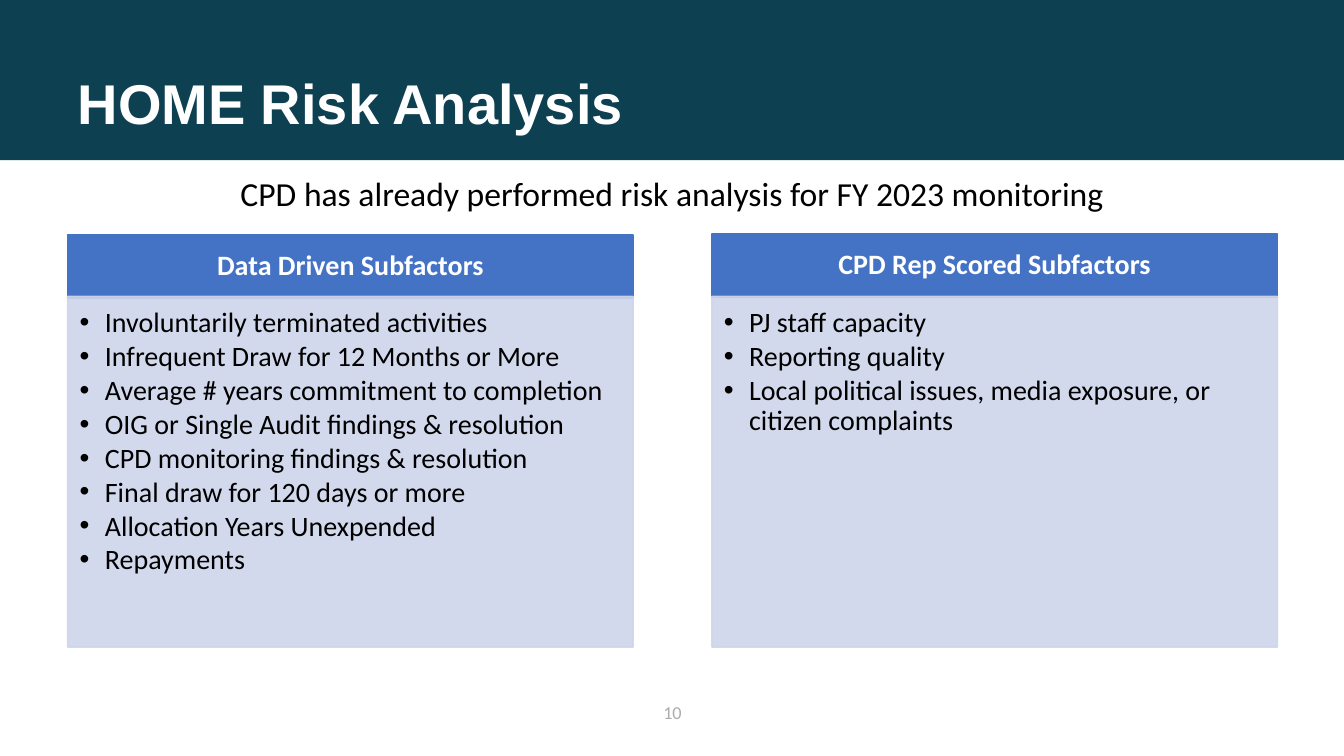
import dataclasses

import lxml.etree
import pptx
import pptx.dml.color
import pptx.enum.shapes
import pptx.enum.text
import pptx.oxml.ns
import pptx.util

PX = 9144  # EMU per px, 100 px to the inch
ALIGN = pptx.enum.text.PP_ALIGN
ANCHOR = pptx.enum.text.MSO_ANCHOR


@dataclasses.dataclass(frozen=True)
class Theme:
    band: str = "0D4051"
    header: str = "4472C4"
    panel: str = "CFD5EA"
    light: str = "FFFFFF"
    dark: str = "000000"
    muted: str = "AFABAB"
    heading_font: str = "Arial"
    body_font: str = "Calibri"
    title_size: int = 40
    lead_size: int = 24
    body_size: int = 20
    number_size: int = 13


theme = Theme()


def add_rect(left, top, width, height, color, alpha=100, outlined=True):
    rect = page.shapes.add_shape(
        pptx.enum.shapes.MSO_SHAPE.RECTANGLE,
        left * PX, top * PX, width * PX, height * PX)
    rect.shadow.inherit = False
    rect.fill.solid()
    rect.fill.fore_color.rgb = pptx.dml.color.RGBColor.from_string(color)
    if outlined:
        rect.line.color.rgb = pptx.dml.color.RGBColor.from_string(color)
        rect.line.width = pptx.util.Pt(1)
    else:
        rect.line.fill.background()
    if alpha < 100:
        for clr in rect.element.spPr.iter(pptx.oxml.ns.qn("a:srgbClr")):
            lxml.etree.SubElement(
                clr, pptx.oxml.ns.qn("a:alpha"), val=str(alpha * 1000))
    return rect


def write_lines(box, lines, size, color, font=theme.body_font, bold=False,
                align=ALIGN.CENTER, anchor=ANCHOR.TOP, spacing=None,
                insets=(10, 5, 10, 5), bullets=False):
    """Fill the box with one paragraph per line; insets are left, top, right, bottom."""
    frame = box.text_frame
    frame.word_wrap = True
    frame.vertical_anchor = anchor
    (frame.margin_left, frame.margin_top,
     frame.margin_right, frame.margin_bottom) = [inset * PX for inset in insets]
    for index, line in enumerate(lines):
        para = frame.add_paragraph() if index else frame.paragraphs[0]
        para.alignment = align
        if spacing:
            para.line_spacing = spacing
        if bullets:
            para.space_after = pptx.util.Pt(2.6)
            props = para._p.get_or_add_pPr()
            props.set("marL", str(25 * PX))
            props.set("indent", str(-25 * PX))
            lxml.etree.SubElement(
                props, pptx.oxml.ns.qn("a:buFont"), typeface="Arial")
            lxml.etree.SubElement(props, pptx.oxml.ns.qn("a:buChar"), char="•")
        span = para.add_run()
        span.text = line
        span.font.name = font
        span.font.size = pptx.util.Pt(size)
        span.font.bold = bold
        span.font.color.rgb = pptx.dml.color.RGBColor.from_string(color)


deck = pptx.Presentation()
deck.slide_width = 1333 * PX
deck.slide_height = 750 * PX
page = deck.slides.add_slide(deck.slide_layouts.get_by_name("Title Only"))

# Title over its band
title = page.shapes.title
title.left, title.top, title.width, title.height = [
    length * PX for length in (67, 42, 1200, 99)]
write_lines(title, ["HOME Risk Analysis"], theme.title_size, theme.light,
            font=theme.heading_font, bold=True, align=ALIGN.LEFT,
            anchor=ANCHOR.BOTTOM, spacing=0.9)
band = add_rect(0, 0, 1333, 159, theme.band, outlined=False)
title.element.addprevious(band.element)

# Two columns of subfactors
columns = [
    (67, 233, "Data Driven Subfactors", [
        "Involuntarily terminated activities",
        "Infrequent Draw for 12 Months or More",
        "Average # years commitment to completion",
        "OIG or Single Audit findings & resolution",
        "CPD monitoring findings & resolution",
        "Final draw for 120 days or more",
        "Allocation Years Unexpended",
        "Repayments",
    ]),
    (706, 232, "CPD Rep Scored Subfactors", [
        "PJ staff capacity",
        "Reporting quality",
        "Local political issues, media exposure, or citizen complaints",
    ]),
]
for left, top, heading, subfactors in columns:
    header = add_rect(left, top, 561, 63, theme.header)
    write_lines(header, [heading], theme.body_size, theme.light, bold=True,
                anchor=ANCHOR.MIDDLE, spacing=0.9, insets=(16, 9, 16, 9))
    panel = add_rect(left, 294, 561, 348, theme.panel, alpha=90)
    write_lines(panel, subfactors, theme.body_size, theme.dark,
                align=ALIGN.LEFT, spacing=0.9, insets=(12, 12, 16, 17),
                bullets=True)

# Lead sentence and page number
lead = page.shapes.add_textbox(167 * PX, 167 * PX, 999 * PX, 91 * PX)
write_lines(lead, ["CPD has already performed risk analysis for FY 2023 monitoring"],
            theme.lead_size, theme.dark)
number = page.shapes.add_textbox(626 * PX, 687 * PX, 82 * PX, 40 * PX)
write_lines(number, ["10"], theme.number_size, theme.muted, anchor=ANCHOR.MIDDLE)

deck.save("out.pptx")
